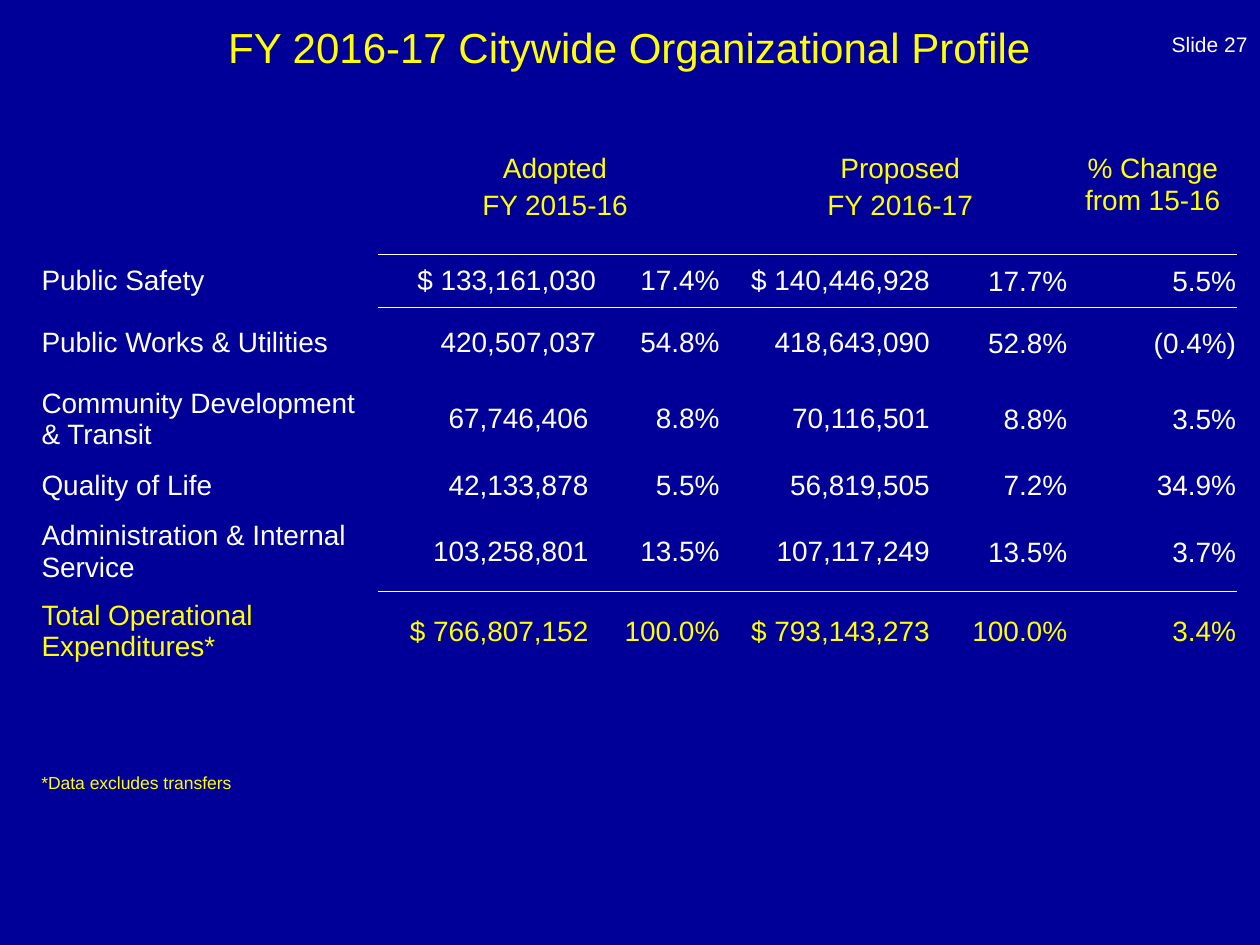
from lxml import etree
from pptx import Presentation
from pptx import util as u
from pptx.dml.color import RGBColor
from pptx.enum import text
from pptx.oxml import ns

Inches, Pt = u.Inches, u.Pt
NAVY = RGBColor(0x00, 0x00, 0x99)
YELLOW = RGBColor(0xFF, 0xFF, 0x00)
WHITE = RGBColor(0xFF, 0xFF, 0xFF)
LEFT, CENTER, RIGHT = (text.PP_ALIGN.LEFT, text.PP_ALIGN.CENTER,
                       text.PP_ALIGN.RIGHT)
TOP, MIDDLE, BOTTOM = (text.MSO_ANCHOR.TOP, text.MSO_ANCHOR.MIDDLE,
                       text.MSO_ANCHOR.BOTTOM)
NO_STYLE = "{2D5ABB26-0587-4C30-8999-92F81FD0307C}"

# Content
TITLE = "FY 2016-17 Citywide Organizational Profile"
HEADINGS = {1: ["Adopted", "FY 2015-16"], 3: ["Proposed", "FY 2016-17"],
            5: ["% Change from 15-16"]}
ROWS = [
    ("Public Safety", "$ 133,161,030", "17.4%", "$ 140,446,928", "17.7%", "5.5%"),
    ("Public Works & Utilities", "420,507,037", "54.8%", "418,643,090", "52.8%", "(0.4%)"),
    ("Community Development & Transit", "67,746,406", "8.8%", "70,116,501", "8.8%", "3.5%"),
    ("Quality of Life", "42,133,878", "5.5%", "56,819,505", "7.2%", "34.9%"),
    ("Administration & Internal Service", "103,258,801", "13.5%", "107,117,249", "13.5%", "3.7%"),
    ("Total Operational Expenditures*", "$ 766,807,152", "100.0%", "$ 793,143,273", "100.0%", "3.4%"),
]
COLUMN_WIDTHS = [2.77, 1.83, 0.98, 1.67, 1, 1.34]
ROW_HEIGHTS = [0.85, 0.42, 0.57, 0.59, 0.42, 0.59, 0.59]
TOTAL_ROW = len(ROWS)
RULED_EDGES = {0: "a:lnB", 1: "a:lnT", TOTAL_ROW - 1: "a:lnB", TOTAL_ROW: "a:lnT"}


def write(frame, lines, size, color, align, gap=0):
    """Fill a text frame with one paragraph per line."""
    frame.word_wrap = True
    for index, line in enumerate(lines):
        para = frame.add_paragraph() if index else frame.paragraphs[0]
        para.text = line
        para.alignment = align
        para.space_before = Pt(gap if index else 0)
        font = para.runs[0].font
        for name, value in {"name": "Arial", "size": Pt(size), "bold": False}.items():
            setattr(font, name, value)
        font.color.rgb = color


def set_margins(target, left, top, right, bottom):
    margins = {"left": left, "top": top, "right": right, "bottom": bottom}
    for side, value in margins.items():
        setattr(target, "margin_" + side, Inches(value))


def add_label(page, place, line, size, color, align, anchor):
    box = page.shapes.add_textbox(*map(Inches, place))
    box.text_frame.vertical_anchor = anchor
    write(box.text_frame, [line], size, color, align)


def rule_edge(cell, edge):
    """Draw a thin white line along one edge of a cell."""
    line = etree.Element(ns.qn(edge), w=str(Pt(1)))
    fill = etree.SubElement(line, ns.qn("a:solidFill"))
    etree.SubElement(fill, ns.qn("a:srgbClr"), val=str(WHITE))
    cell._tc.get_or_add_tcPr().insert(0, line)


def add_profile_table(page):
    frame = page.shapes.add_table(
        len(ROW_HEIGHTS), len(COLUMN_WIDTHS), Inches(0.23), Inches(1.17),
        Inches(sum(COLUMN_WIDTHS)), Inches(sum(ROW_HEIGHTS)))
    table = frame.table
    table.first_row = table.horz_banding = False
    table._tbl.tblPr.find(ns.qn("a:tableStyleId")).text = NO_STYLE
    for column, width in zip(table.columns, COLUMN_WIDTHS):
        column.width = Inches(width)
    for row, height in zip(table.rows, ROW_HEIGHTS):
        row.height = Inches(height)

    # Fills and rules
    for r in range(len(ROW_HEIGHTS)):
        for c in range(len(COLUMN_WIDTHS)):
            cell = table.cell(r, c)
            cell.fill.background()
            if c and r in RULED_EDGES:
                rule_edge(cell, RULED_EDGES[r])

    # Headings, the first two spanning amount and share
    for c, lines in HEADINGS.items():
        cell = table.cell(0, c)
        if c < 5:
            cell.merge(table.cell(0, c + 1))
        set_margins(cell, 0.1, 0.05, 0.1, 0.05)
        write(cell.text_frame, lines, 16, YELLOW, CENTER, gap=3.2)

    # Figures
    for r, values in enumerate(ROWS, 1):
        color = YELLOW if r == TOTAL_ROW else WHITE
        for c, value in enumerate(values):
            cell = table.cell(r, c)
            cell.vertical_anchor = MIDDLE
            if c >= 4:
                set_margins(cell, 0.01, 0.01, 0.01, 0)
            else:
                right = 0.16 if c == 1 and r >= 3 else 0.1
                set_margins(cell, 0.1, 0.05, right, 0.05)
            write(cell.text_frame, [value], 16, color, RIGHT if c else LEFT)


def main():
    deck = Presentation()
    deck.slide_width, deck.slide_height = Inches(10), Inches(7.5)
    page = deck.slides.add_slide(deck.slide_layouts[5])
    page.background.fill.solid()
    page.background.fill.fore_color.rgb = NAVY

    # Title
    title = page.shapes.title
    place = {"left": 0.33, "top": 0.17, "width": 9.33, "height": 0.67}
    for name, value in place.items():
        setattr(title, name, Inches(value))
    title.text_frame.auto_size = text.MSO_AUTO_SIZE.NONE
    title.text_frame.vertical_anchor = TOP
    set_margins(title.text_frame, 0.1, 0, 0.1, 0)
    write(title.text_frame, [TITLE], 24, YELLOW, CENTER)

    # Slide number, table and footnote
    add_label(page, (7.67, 0, 2.33, 0.5), "Slide 27", 12, WHITE, RIGHT, BOTTOM)
    add_profile_table(page)
    add_label(page, (0.23, 6.08, 4.5, 0.27), "*Data excludes transfers",
              10, YELLOW, LEFT, TOP)
    deck.save("out.pptx")


if __name__ == "__main__":
    main()
